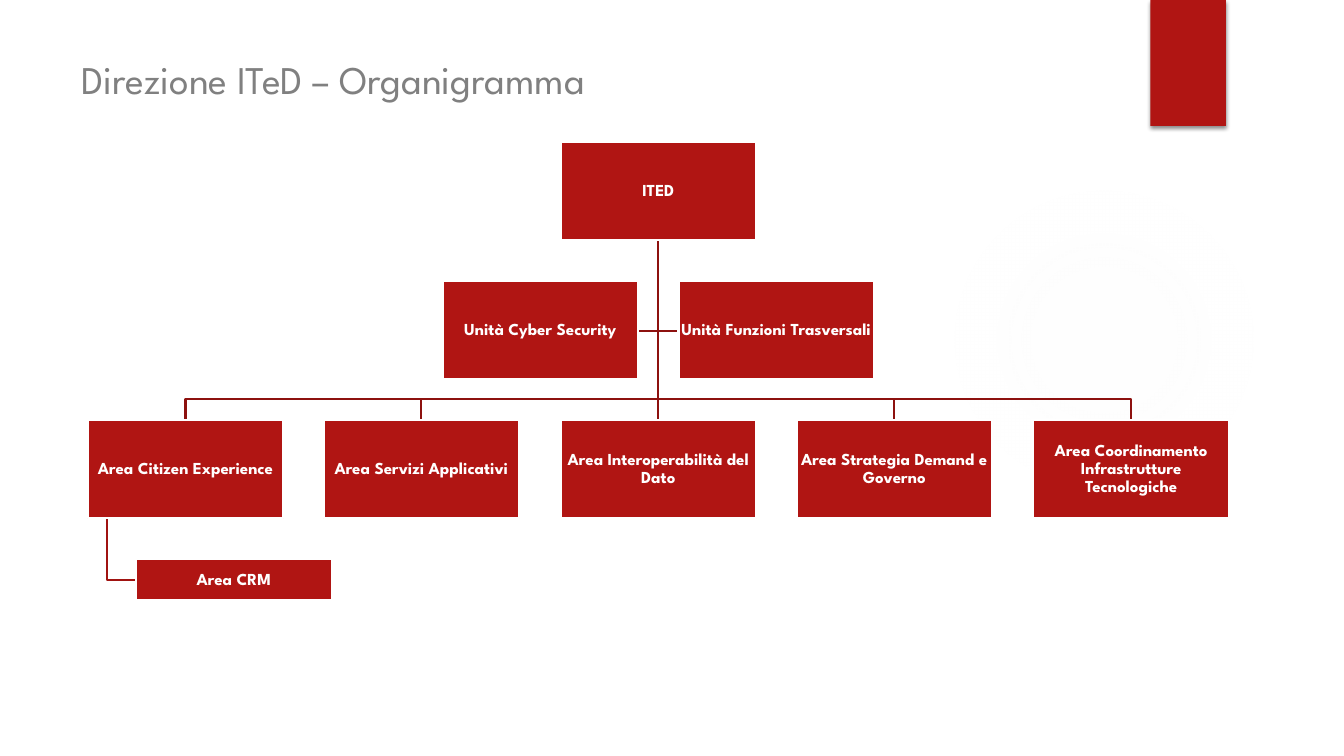
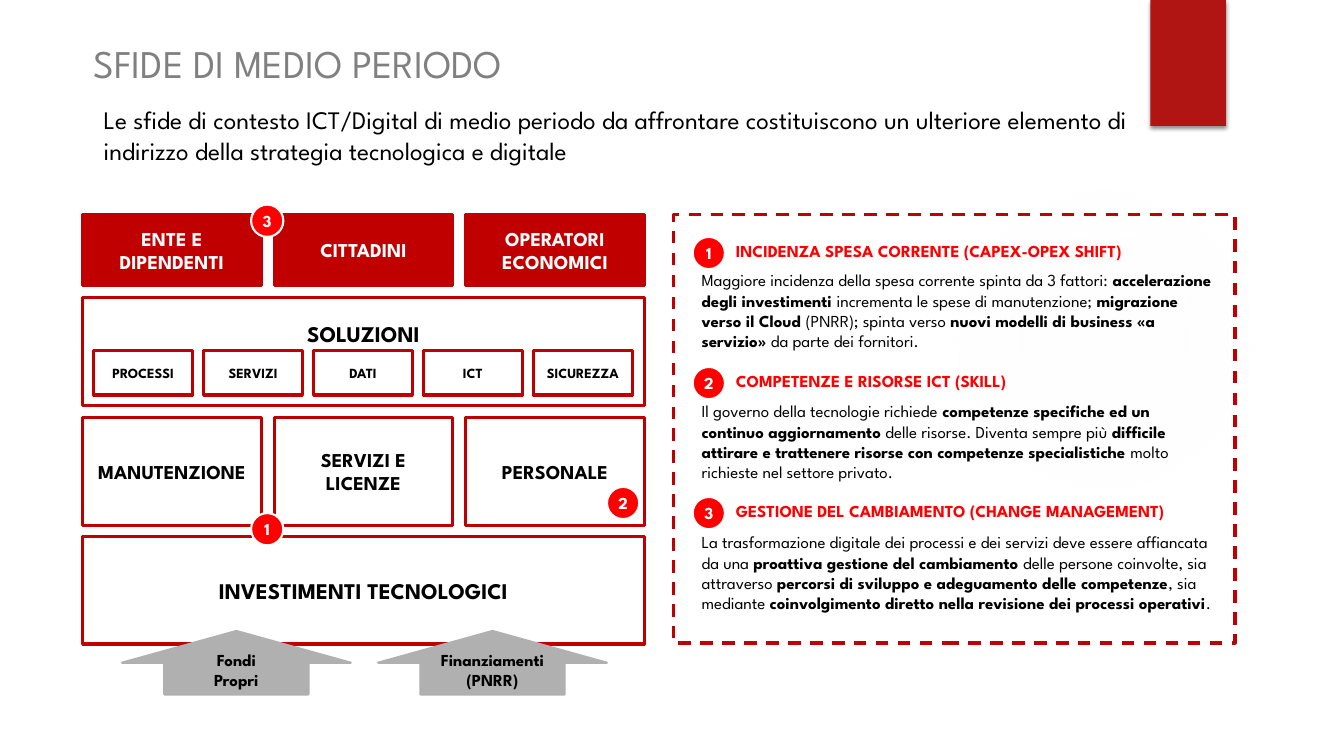
from pptx import Presentation
from pptx.dml.color import RGBColor
from pptx.enum.dml import MSO_LINE
from pptx.enum.shapes import MSO_CONNECTOR, MSO_SHAPE
from pptx.enum.text import MSO_ANCHOR, MSO_AUTO_SIZE, PP_ALIGN
from pptx.oxml import parse_xml
from pptx.oxml.ns import nsdecls, qn
from pptx.util import Emu, Pt

PX = 9144  # EMU per px, at 100 px to the inch
FONT = "League Spartan"
TITLE_ONLY = 5
COLORS = {
    "band": "B01513",
    "trunk": "8D110F",
    "branch": "A01311",
    "frame": "C00000",
    "accent": "FF0000",
    "arrow": "B0B0B0",
    "title": "808080",
    "glow": "F3F3F3",
    "black": "000000",
    "white": "FFFFFF",
}


def px(*lengths):
    return [Emu(length * PX) for length in lengths]


def rgb(name):
    return RGBColor.from_string(COLORS[name])


class Deck:
    """Holds the shared style and the slide being filled."""

    def __init__(self):
        self.presentation = Presentation()
        self.presentation.slide_width, self.presentation.slide_height = px(1333, 750)
        self.slide = None

    def new_slide(self, title, left, top, height):
        layout = self.presentation.slide_layouts[TITLE_ONLY]
        self.slide = self.presentation.slides.add_slide(layout)
        self.glow(941, 183, 308)
        self.band(1141, 0, 75, 125)
        shape = self.slide.shapes.title
        shape.left, shape.top, shape.width, shape.height = px(left, top, 1029, height)
        self.set_text(shape, [title], 28, "title", False, PP_ALIGN.LEFT, MSO_ANCHOR.TOP)

    def glow(self, left, top, size):
        """Faint round light, fading out towards its edge."""
        shape = self.shape(MSO_SHAPE.OVAL, left, top, size, size)
        stops = "".join(
            f'<a:gs pos="{position}000"><a:srgbClr val="{COLORS["glow"]}">'
            f'<a:alpha val="{alpha}000"/></a:srgbClr></a:gs>'
            for position, alpha in ((0, 7), (36, 6), (69, 0))
        )
        gradient = parse_xml(
            f'<a:gradFill {nsdecls("a")}><a:gsLst>{stops}</a:gsLst><a:path path="circle">'
            '<a:fillToRect l="50000" t="50000" r="50000" b="50000"/></a:path></a:gradFill>'
        )
        properties = shape._element.spPr
        properties.replace(properties.find(qn("a:noFill")), gradient)

    def band(self, left, top, width, height):
        shape = self.shape(MSO_SHAPE.RECTANGLE, left, top, width, height, "band")
        shadow = parse_xml(
            f'<a:outerShdw {nsdecls("a")} blurRad="38100" dist="25400" dir="5400000">'
            f'<a:srgbClr val="{COLORS["black"]}"><a:alpha val="45000"/></a:srgbClr></a:outerShdw>'
        )
        shape._element.spPr.find(qn("a:effectLst")).append(shadow)

    def shape(self, kind, left, top, width, height, fill=None, line=None, weight=2.25):
        shape = self.slide.shapes.add_shape(kind, *px(left, top, width, height))
        self.paint(shape, fill, line, weight)
        return shape

    def paint(self, shape, fill, line, weight):
        shape.shadow.inherit = False
        if fill:
            shape.fill.solid()
            shape.fill.fore_color.rgb = rgb(fill)
        else:
            shape.fill.background()
        if line:
            shape.line.color.rgb = rgb(line)
            shape.line.width = Pt(weight)
        else:
            shape.line.fill.background()

    def set_text(self, shape, paragraphs, size, color, bold=True,
                 align=PP_ALIGN.CENTER, anchor=MSO_ANCHOR.MIDDLE, spacing=None):
        """Fill a shape with text; pieces between asterisks are bold."""
        frame = shape.text_frame
        frame.word_wrap = True
        frame.auto_size = MSO_AUTO_SIZE.NONE
        frame.vertical_anchor = anchor
        for index, text in enumerate(paragraphs):
            paragraph = frame.add_paragraph() if index else frame.paragraphs[0]
            paragraph.alignment = align
            if spacing:
                paragraph.line_spacing = spacing
            for position, piece in enumerate(text.split("*")):
                if piece:
                    run = paragraph.add_run()
                    run.text = piece
                    run.font.name = FONT
                    run.font.size = Pt(size)
                    run.font.bold = bold or position % 2 == 1
                    run.font.color.rgb = rgb(color)
        return frame

    def margins(self, frame, side, top, bottom):
        frame.margin_left, frame.margin_right = px(side, side)
        frame.margin_top, frame.margin_bottom = px(top, bottom)

    def text(self, text, left, top, width, height, size=12, color="black", bold=False):
        box = self.slide.shapes.add_textbox(*px(left, top, width, height))
        self.set_text(box, [text], size, color, bold, PP_ALIGN.LEFT, MSO_ANCHOR.TOP)

    def unit(self, name, left, top, height=97):
        """Organisation chart box."""
        shape = self.shape(MSO_SHAPE.RECTANGLE, left, top, 194, height, "band", "white", 1.5)
        frame = self.set_text(shape, [name], 12, "white", spacing=0.9)
        self.margins(frame, 1, 1, 1)

    def block(self, text, left, top, width, height, size=14, fill=None, bottom=5):
        """Framed box; a larger bottom margin lifts its text."""
        shape = self.shape(MSO_SHAPE.RECTANGLE, left, top, width, height, fill, "frame")
        frame = self.set_text(shape, [text], size, "white" if fill else "black")
        self.margins(frame, 10, 5, bottom)

    def badge(self, number, left, top):
        shape = self.shape(MSO_SHAPE.OVAL, left, top, 32, 32, "accent", "white", 1.5)
        self.margins(self.set_text(shape, [str(number)], 12, "white"), 0, 0, 0)

    def funding_arrow(self, lines, left, top):
        shape = self.shape(MSO_SHAPE.UP_ARROW, left, top, 227, 63, "arrow", "arrow", 1.5)
        shape.adjustments[0] = 0.63
        shape.adjustments[1] = 0.5
        self.margins(self.set_text(shape, lines, 12, "black"), 5, 0, 6)

    def dashed_frame(self, left, top, width, height):
        shape = self.shape(MSO_SHAPE.RECTANGLE, left, top, width, height, line="frame")
        shape.line.dash_style = MSO_LINE.DASH

    def line(self, start, end, color="trunk"):
        connector = self.slide.shapes.add_connector(MSO_CONNECTOR.STRAIGHT, *px(*start, *end))
        connector.line.color.rgb = rgb(color)
        connector.line.width = Pt(1.5)
        connector._element.spPr.append(parse_xml(f'<a:effectLst {nsdecls("a")}/>'))

    def bent_line(self, points, color="trunk"):
        builder = self.slide.shapes.build_freeform(*points[0], scale=PX)
        builder.add_line_segments(points[1:], close=False)
        self.paint(builder.convert_to_shape(), None, color, 1.5)


def organisation_chart(deck):
    deck.new_slide("Direzione ITeD – Organigramma", 71, 50, 153)
    areas = [
        "Area Citizen Experience",
        "Area Servizi Applicativi",
        "Area Interoperabilità del Dato",
        "Area Strategia Demand e Governo",
        "Area Coordinamento Infrastrutture Tecnologiche",
    ]
    lefts = [87 + 469 * index // 2 for index in range(len(areas))]
    centers = [left + 97 for left in lefts]
    root_center = centers[2]
    area_top, bus_top = 417, 396

    deck.line((root_center, 238), (root_center, area_top))
    deck.line((633, 328), (673, 328))
    deck.bent_line([(centers[0], area_top), (centers[0], bus_top),
                    (centers[-1], bus_top), (centers[-1], area_top)])
    for center in (centers[1], centers[3]):
        deck.line((center, bus_top), (center, area_top))
    deck.bent_line([(106, 514), (106, 575), (135, 575)], "branch")

    deck.unit("ITED", lefts[2], 141)
    deck.unit("Unità Cyber Security", 439, 279)
    deck.unit("Unità Funzioni Trasversali", 673, 279)
    for area, left in zip(areas, lefts):
        deck.unit(area, left, area_top)
    deck.unit("Area CRM", 135, 555, 40)


def challenges(deck):
    deck.new_slide("SFIDE DI MEDIO PERIODO", 83, 34, 85)
    deck.text("Le sfide di contesto ICT/Digital di medio periodo da affrontare costituiscono "
              "un ulteriore elemento di indirizzo della strategia tecnologica e digitale",
              93, 99, 1039, 71, 18)

    left, full_width = 82, 557
    deck.block("INVESTIMENTI TECNOLOGICI", left, 532, full_width, 107, 16)
    deck.block("SOLUZIONI", left, 295, full_width, 107, 16, bottom=41)
    columns = [
        ("ENTE E DIPENDENTI", "MANUTENZIONE"),
        ("CITTADINI", "SERVIZI E LICENZE"),
        ("OPERATORI ECONOMICI", "PERSONALE"),
    ]
    for index, (audience, resource) in enumerate(columns):
        column_left = left + 190 * index
        deck.block(audience, column_left, 213, 177, 70, fill="frame")
        deck.block(resource, column_left, 414, 177, 107)
    solutions = ["PROCESSI", "SERVIZI", "DATI", "ICT", "SICUREZZA"]
    for index, solution in enumerate(solutions):
        deck.block(solution, 93 + 109 * index, 348, 98, 44, 10)

    deck.funding_arrow(["Fondi", "Propri"], 121, 626)
    deck.funding_arrow(["Finanziamenti", "(PNRR)"], 375, 626)
    for number, badge_left, badge_top in ((1, 249, 509), (2, 602, 483), (3, 249, 203)):
        deck.badge(number, badge_left, badge_top)

    deck.dashed_frame(668, 213, 557, 425)
    topics = [
        ("INCIDENZA SPESA CORRENTE (CAPEX-OPEX SHIFT)",
         "Maggiore incidenza della spesa corrente spinta da 3 fattori: *accelerazione degli "
         "investimenti *incrementa le spese di manutenzione; *migrazione verso il Cloud *(PNRR); "
         "spinta verso *nuovi modelli di business «a servizio» *da parte dei fornitori."),
        ("COMPETENZE E RISORSE ICT (SKILL)",
         "Il governo della tecnologie richiede *competenze specifiche ed un continuo "
         "aggiornamento* delle risorse. Diventa sempre più *difficile attirare e trattenere "
         "risorse con competenze specialistiche *molto richieste nel settore privato."),
        ("GESTIONE DEL CAMBIAMENTO (CHANGE MANAGEMENT)",
         "La trasformazione digitale dei processi e dei servizi deve essere affiancata da una "
         "*proattiva gestione del cambiamento *delle persone coinvolte, sia attraverso *percorsi "
         "di sviluppo e adeguamento delle competenze*, sia mediante *coinvolgimento diretto "
         "nella revisione dei processi operativi*."),
    ]
    for index, (heading, description) in enumerate(topics):
        heading_top = 234 + 129 * index
        deck.badge(index + 1, 687, heading_top + 1)
        deck.text(heading, 720, heading_top, 490, 30, color="accent", bold=True)
        deck.text(description, 686, 263 + 130 * index, 531, 111)


def main():
    deck = Deck()
    organisation_chart(deck)
    challenges(deck)
    deck.presentation.save("out.pptx")


if __name__ == "__main__":
    main()
